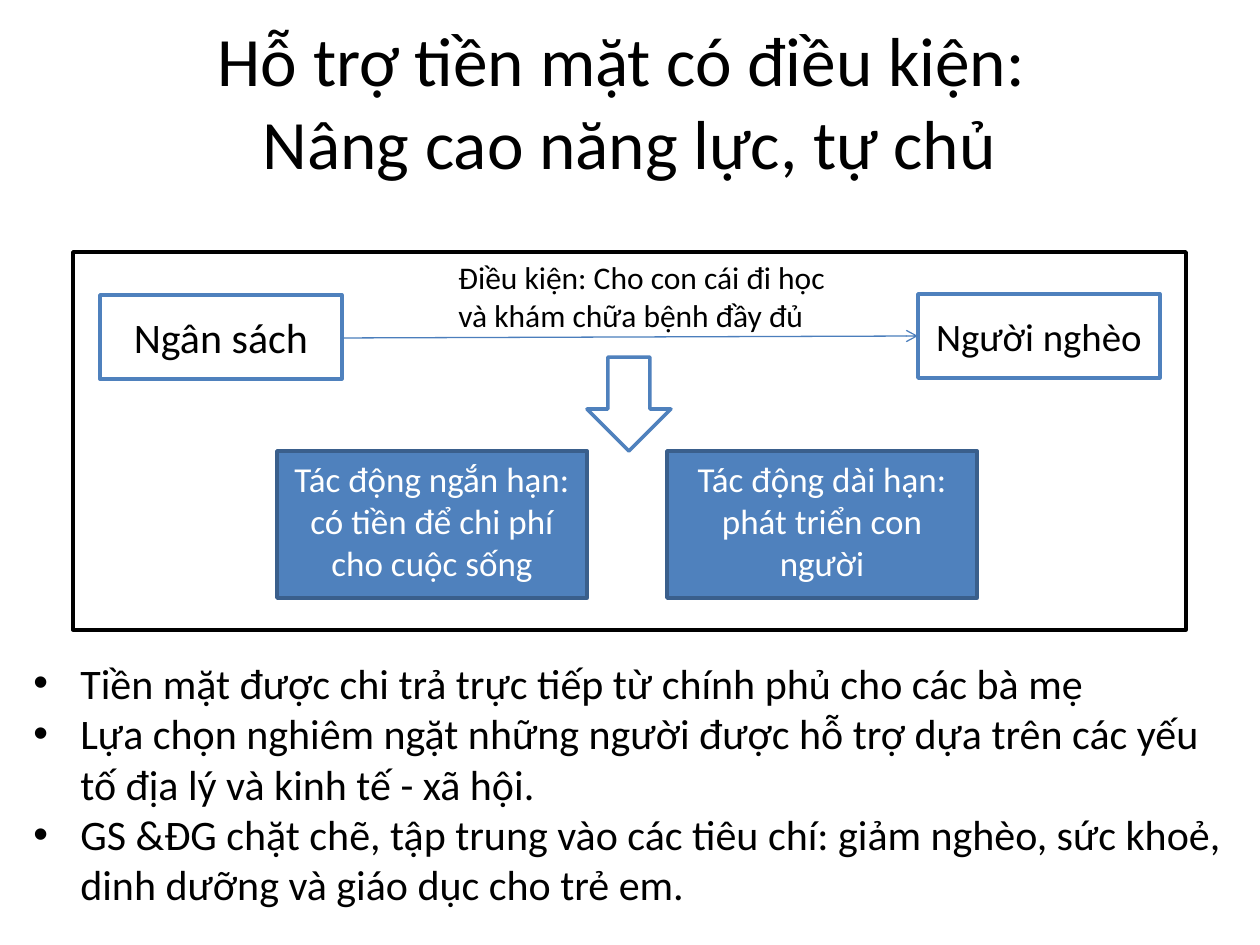
from lxml import etree
from pptx import Presentation
from pptx import util as u
from pptx.dml import color
from pptx.enum import shapes, text
from pptx.oxml import ns

PX = 914400 / 126
BLUE, BLACK, WHITE = "4F81BD", "000000", "FFFFFF"
RECT = shapes.MSO_SHAPE.RECTANGLE
DOWN = shapes.MSO_SHAPE.DOWN_ARROW


def rgb(value):
    return color.RGBColor.from_string(value)


def write(sp, lines, size, fg=BLACK, align="LEFT", anchor="TOP", before=0, bullet=None):
    tf = sp.text_frame
    tf.word_wrap = True
    tf.vertical_anchor = getattr(text.MSO_ANCHOR, anchor)
    for i, line in enumerate(lines):
        p = tf.paragraphs[0] if i == 0 else tf.add_paragraph()
        p.text = line
        p.alignment = getattr(text.PP_ALIGN, align)
        p.space_before = u.Pt(before)
        for r in p.runs:
            r.font.name = "Calibri"
            r.font.size = u.Pt(size)
            r.font.color.rgb = rgb(fg)
        if bullet:
            pPr = p._p.get_or_add_pPr()
            pPr.set("marL", str(int(47 * PX)))
            pPr.set("indent", str(int(-47 * PX)))
            etree.SubElement(pPr, ns.qn("a:buFont")).set("typeface", "Arial")
            etree.SubElement(pPr, ns.qn("a:buChar")).set("char", bullet)


prs = Presentation()
prs.slide_width, prs.slide_height = u.Inches(10), u.Inches(7.5)
s = prs.slides.add_slide(prs.slide_layouts[6])

boxes = {}
for name, kind, box, fill, line in [
    ("frame", RECT, (73, 252, 1113, 378), WHITE, BLACK),
    ("budget", RECT, (100, 295, 242, 84), WHITE, BLUE),
    ("poor", RECT, (918, 294, 242, 84), WHITE, BLUE),
    ("down", DOWN, (587, 357, 84, 94), WHITE, BLUE),
    ("short", RECT, (277, 451, 310, 147), BLUE, "3A5F8C"),
    ("long", RECT, (667, 451, 310, 147), BLUE, "3A5F8C"),
]:
    sp = s.shapes.add_shape(kind, *[int(v * PX) for v in box])
    sp.shadow.inherit = False
    sp.fill.solid()
    sp.fill.fore_color.rgb = rgb(fill)
    sp.line.color.rgb = rgb(line)
    sp.line.width = u.Pt(2)
    boxes[name] = sp

for name, box in [
    ("title", (15, 21, 1229, 158)),
    ("condition", (446, 252, 420, 89)),
    ("notes", (21, 651, 1218, 268)),
]:
    boxes[name] = s.shapes.add_textbox(*[int(v * PX) for v in box])

write(boxes["title"], ["Hỗ trợ tiền mặt có điều kiện: \vNâng cao năng lực, tự chủ"],
      39.6, align="CENTER", anchor="MIDDLE")
write(boxes["budget"], ["Ngân sách"], 24, align="CENTER", anchor="MIDDLE", before=5)
write(boxes["poor"], ["Người nghèo"], 22.2, align="CENTER", anchor="MIDDLE", before=4)
write(boxes["condition"], ["Điều kiện: Cho con cái đi học và khám chữa bệnh đầy đủ"], 18)
write(boxes["short"], ["Tác động ngắn hạn: có tiền để chi phí cho cuộc sống"],
      20, fg=WHITE, align="CENTER")
write(boxes["long"], ["Tác động dài hạn: phát triển con người"],
      20, fg=WHITE, align="CENTER")
write(boxes["notes"], [
    "Tiền mặt được chi trả trực tiếp từ chính phủ cho các bà mẹ",
    "Lựa chọn nghiêm ngặt những người được hỗ trợ dựa trên các yếu tố địa lý "
    "và kinh tế - xã hội.",
    "GS &ĐG chặt chẽ, tập trung vào các tiêu chí: giảm nghèo, sức khoẻ, "
    "dinh dưỡng và giáo dục cho trẻ em.",
], 24, bullet="•")

cn = s.shapes.add_connector(shapes.MSO_CONNECTOR.STRAIGHT,
                            *[int(v * PX) for v in (341, 338, 918, 336)])
cn.line.color.rgb = rgb("4B7EBC")
cn.line.width = u.Pt(0.75)
etree.SubElement(cn.line._get_or_add_ln(), ns.qn("a:tailEnd")).set("type", "arrow")
etree.SubElement(cn._element.spPr, ns.qn("a:effectLst"))

prs.save("out.pptx")
